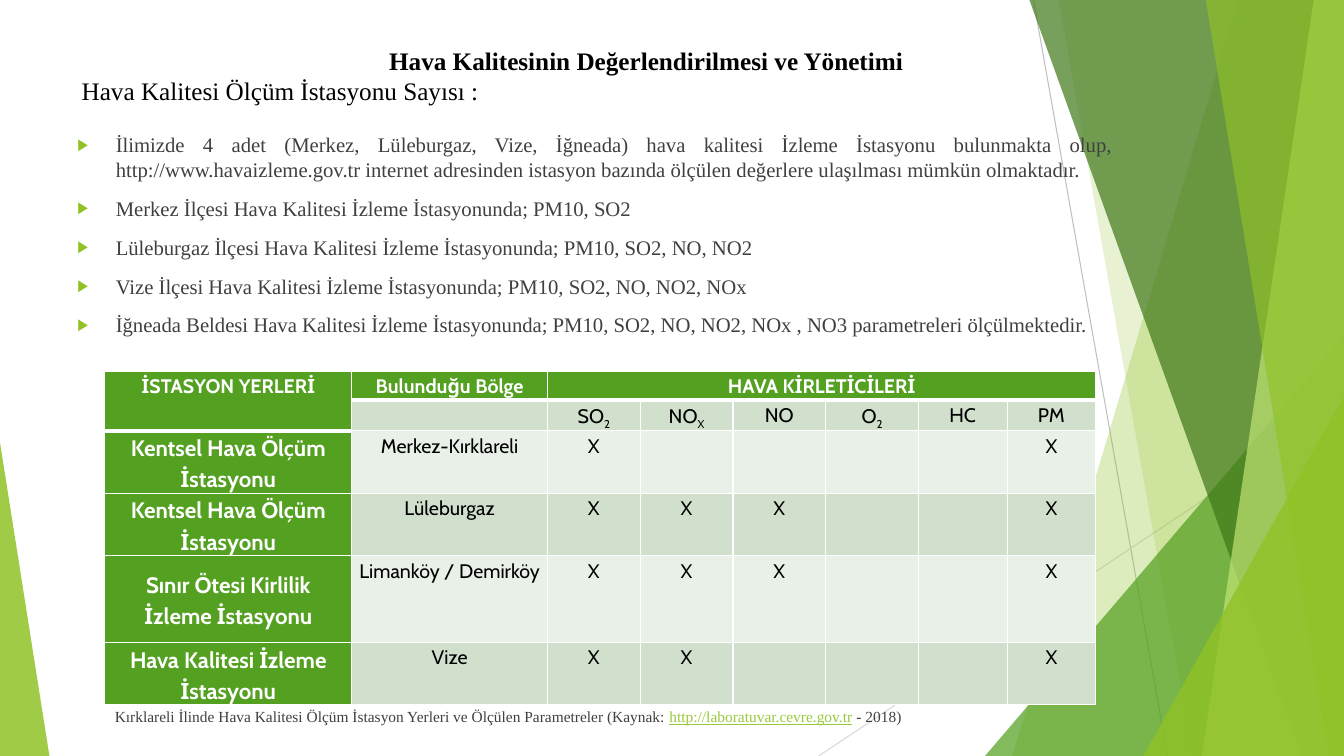
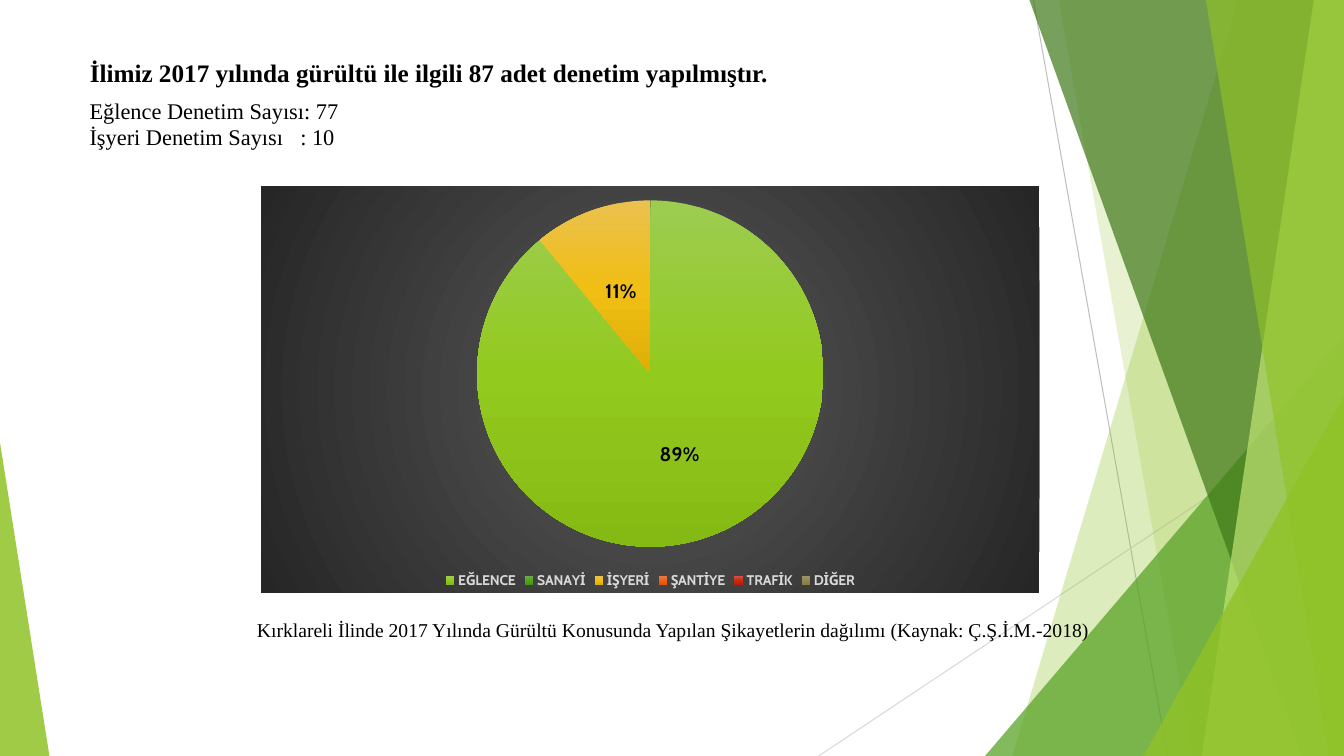
from lxml.etree import SubElement
from pptx import Presentation
from pptx.chart.data import CategoryChartData
from pptx.dml.color import RGBColor
from pptx.enum.chart import XL_CHART_TYPE, XL_LABEL_POSITION, XL_LEGEND_POSITION
from pptx.enum.shapes import MSO_CONNECTOR, MSO_SHAPE
from pptx.enum.text import MSO_ANCHOR, MSO_AUTO_SIZE, PP_ALIGN
from pptx.oxml import parse_xml
from pptx.oxml.ns import nsdecls, qn
from pptx.util import Inches, Pt

WIDTH, HEIGHT = 13.33, 7.5
SERIF, SANS = "Times New Roman", "Cabin"
COLORS = {
    "lime": "90C226", "green": "54A021", "forest": "3F7819", "pale": "C0E474",
    "link": "99CA3C", "black": "000000", "gray": "404040", "white": "FFFFFF",
    "band_dark": "D1DFCD", "band_light": "E9F0E8", "legend": "D9D9D9",
    "rule_dark": "BFBFBF", "rule_light": "D9D9D9",
}

# Backdrop bands that reach the right edge: top left, bottom left, bottom right, colour, opacity
BANDS_BEHIND = [(12.28, 10.04, "lime", 30), (10.5, 11.83, "lime", 20)]
BANDS_FRONT = [(10.21, 12.91, "forest", 70), (13.03, 11.92, "pale", 70),
               (11.96, 13.18, "lime", 65)]

BULLETS = [
    "İlimizde 4 adet (Merkez, Lüleburgaz, Vize, İğneada) hava kalitesi İzleme İstasyonu "
    "bulunmakta olup, http://www.havaizleme.gov.tr internet adresinden istasyon bazında "
    "ölçülen değerlere ulaşılması mümkün olmaktadır.",
    "Merkez İlçesi Hava Kalitesi İzleme İstasyonunda; PM10, SO2",
    "Lüleburgaz İlçesi Hava Kalitesi İzleme İstasyonunda; PM10, SO2, NO, NO2",
    "Vize İlçesi Hava Kalitesi İzleme İstasyonunda; PM10, SO2, NO, NO2, NOx",
    "İğneada Beldesi Hava Kalitesi İzleme İstasyonunda; PM10, SO2, NO, NO2, NOx , NO3 "
    "parametreleri ölçülmektedir.",
]

POLLUTANTS = [("SO", "2"), ("NO", "X"), ("NO", ""), ("O", "2"), ("HC", ""), ("PM", "")]
STATIONS = [
    ("Kentsel Hava Ölçüm İstasyonu", "Merkez-Kırklareli", {"SO2", "PM"}),
    ("Kentsel Hava Ölçüm İstasyonu", "Lüleburgaz", {"SO2", "NOX", "NO", "PM"}),
    ("Sınır Ötesi Kirlilik İzleme İstasyonu", "Limanköy / Demirköy",
     {"SO2", "NOX", "NO", "PM"}),
    ("Hava Kalitesi İzleme İstasyonu", "Vize", {"SO2", "NOX", "PM"}),
]
COLUMN_WIDTHS = [2.45, 1.94] + [0.92] * 4 + [0.88] * 2
ROW_HEIGHTS = [0.29, 0.29, 0.62, 0.62, 0.86, 0.62]

# Category, value, gradient from top to bottom
SLICES = [
    ("EĞLENCE", 89, ("9DCC51", "93CA1E", "85BA14")),
    ("SANAYİ", None, ("6BAC4F", "53A61B", "489912")),
    ("İŞYERİ", 11, ("EBC14F", "F0BE14", "E0AF07")),
    ("ŞANTİYE", None, ("EC794E", "F1630E", "E05603")),
    ("TRAFİK", None, ("CE544D", "CC2911", "BD1E08")),
    ("DİĞER", None, ("9E946B", "948852", "867A46")),
]


def rgb(color):
    return RGBColor.from_string(COLORS[color])


def style_font(font, color="black", **values):
    font.color.rgb = rgb(color)
    for name, value in values.items():
        setattr(font, name, value)


def add_span(para, text, size, color="black", font=SERIF, bold=False, underline=False):
    span = para.add_run()
    span.text = text
    style_font(span.font, color, size=Pt(size), name=font, bold=bold, underline=underline)
    return span


def prepare_frame(box):
    frame = box.text_frame
    for name, value in {"word_wrap": True, "auto_size": MSO_AUTO_SIZE.NONE,
                        "vertical_anchor": MSO_ANCHOR.TOP}.items():
        setattr(frame, name, value)
    return frame


def add_text_box(page, left, top, width, height):
    box = page.shapes.add_textbox(*map(Inches, (left, top, width, height)))
    return prepare_frame(box)


def place_title(page, left, top, width, height, text, align):
    title = page.shapes.title
    title.left, title.top, title.width, title.height = map(Inches, (left, top, width, height))
    frame = prepare_frame(title)
    frame.paragraphs[0].alignment = align
    add_span(frame.paragraphs[0], text, 18, bold=True)
    return frame


def next_paragraph(frame):
    """Give the first paragraph while it is unused, then new ones."""
    first = frame.paragraphs[0]
    return frame.add_paragraph() if first.runs else first


def paint(shape, color, opacity):
    shape.shadow.inherit = False
    shape.line.fill.background()
    shape.fill.solid()
    shape.fill.fore_color.rgb = rgb(color)
    tint = shape.element.xpath(".//a:solidFill/a:srgbClr")[0]
    SubElement(tint, qn("a:alpha"), val=str(opacity * 1000))
    return shape


def add_rule(page, start, end, color):
    rule = page.shapes.add_connector(MSO_CONNECTOR.STRAIGHT, *map(Inches, start + end))
    rule.line.color.rgb = rgb(color)
    rule.line.width = Pt(0.75)
    SubElement(rule.element.spPr, qn("a:effectLst"))
    return rule


def add_band(page, top_left, bottom_left, color, opacity):
    """Draw a full-height band whose right side is the slide edge or slants near it."""
    # A band leaning right ends at its own foot; all others fill up to the edge.
    corners = [(top_left, 0), (WIDTH, 0), (WIDTH, HEIGHT), (bottom_left, HEIGHT)]
    points = [tuple(map(Inches, corner)) for corner in corners]
    builder = page.shapes.build_freeform(*points[0])
    builder.add_line_segments(points[1:], close=True)
    return paint(builder.convert_to_shape(), color, opacity)


def add_triangle(page, left, top, width, apex, color, opacity):
    triangle = page.shapes.add_shape(MSO_SHAPE.ISOSCELES_TRIANGLE,
                                     *map(Inches, (left, top, width, HEIGHT - top)))
    triangle.adjustments[0] = apex
    return paint(triangle, color, opacity)


def build_backdrop(page):
    """Draw the shared backdrop and move it to the layout, behind its placeholders."""
    parts = [add_rule(page, (10.25, 0), (11.58, HEIGHT), "rule_dark"),
             add_rule(page, (WIDTH, 4.03), (8.12, HEIGHT), "rule_light")]
    parts += [add_band(page, *band) for band in BANDS_BEHIND]
    parts.append(add_triangle(page, 9.77, 3.33, 3.56, 1, "green", 72))
    parts += [add_band(page, *band) for band in BANDS_FRONT]
    parts += [add_triangle(page, 11.34, 3.93, 1.99, 1, "lime", 80),
              add_triangle(page, 0, 4.39, 0.49, 0, "lime", 85)]
    tree = page.slide_layout.shapes.element
    for index, part in enumerate(parts):
        part.element.xpath(".//p:cNvPr")[0].set("id", str(100 + index))
        tree.insert(2 + index, part.element)


def add_bullet(frame, text):
    para = next_paragraph(frame)
    para.alignment = PP_ALIGN.JUSTIFY
    para.space_before = Pt(10)
    add_span(para, text, 14.8, "gray")
    properties = para._p.get_or_add_pPr()
    properties.set("marL", str(Inches(0.38)))
    properties.set("indent", str(-Inches(0.38)))
    bullet_color = SubElement(properties, qn("a:buClr"))
    SubElement(bullet_color, qn("a:srgbClr"), val=COLORS["lime"])
    SubElement(properties, qn("a:buSzPct"), val="80000")
    SubElement(properties, qn("a:buFont"), typeface="Arial")
    SubElement(properties, qn("a:buChar"), char="▶")


def add_borders(cell, **points):
    """Draw white borders of 1 point, or as given for the sides L, R, T and B."""
    properties = cell._tc.get_or_add_tcPr()
    for side in "LRTB":
        line = SubElement(properties, qn(f"a:ln{side}"), w=str(Pt(points.get(side, 1))))
        fill = SubElement(line, qn("a:solidFill"))
        SubElement(fill, qn("a:srgbClr"), val=COLORS["white"])


def fill_cell(cell, fill, text="", subscript="", size=14, color="black", bold=False,
              anchor=MSO_ANCHOR.TOP, **borders):
    add_borders(cell, **borders)
    cell.fill.solid()
    cell.fill.fore_color.rgb = rgb(fill)
    for name, value in {"margin_left": Inches(0.07), "margin_right": Inches(0.07),
                        "margin_top": 0, "margin_bottom": 0,
                        "vertical_anchor": anchor}.items():
        setattr(cell, name, value)
    para = cell.text_frame.paragraphs[0]
    para.alignment = PP_ALIGN.CENTER
    para.line_spacing = 1.15
    if text:
        add_span(para, text, size, color, SANS, bold)
    else:
        SubElement(para._p, qn("a:endParaRPr"), sz=str(size * 100))
    if subscript:
        span = add_span(para, subscript, size, color, SANS, bold)
        span._r.get_or_add_rPr().set("baseline", "-25000")


def add_station_table(page):
    frame = page.shapes.add_table(len(ROW_HEIGHTS), len(COLUMN_WIDTHS), Inches(1.04),
                                  Inches(3.68), Inches(sum(COLUMN_WIDTHS)),
                                  Inches(sum(ROW_HEIGHTS)))
    table = frame.table
    table.first_row = table.horz_banding = False
    for column, width in zip(table.columns, COLUMN_WIDTHS):
        column.width = Inches(width)
    for row, height in zip(table.rows, ROW_HEIGHTS):
        row.height = Inches(height)

    heading = {"fill": "green", "color": "white", "bold": True}
    titles = ["İSTASYON YERLERİ", "Bulunduğu Bölge", "HAVA KİRLETİCİLERİ"] + [""] * 5
    for column, text in enumerate(titles):
        fill_cell(table.cell(0, column), text=text, B=3, **heading)
    fill_cell(table.cell(1, 0), B=3, **heading)
    for column, (name, subscript) in enumerate([("", "")] + POLLUTANTS, 1):
        fill_cell(table.cell(1, column), "band_dark", name, subscript, T=3)
    table.cell(0, 0).merge(table.cell(1, 0))
    table.cell(0, 2).merge(table.cell(0, 7))

    for row, (station, region, measured) in enumerate(STATIONS, 2):
        band = "band_dark" if row % 2 else "band_light"
        fill_cell(table.cell(row, 0), text=station, size=16, anchor=MSO_ANCHOR.MIDDLE,
                  T=3 if row == 2 else 1, **heading)
        marks = ["X" if "".join(name) in measured else "" for name in POLLUTANTS]
        for column, text in enumerate([region] + marks, 1):
            fill_cell(table.cell(row, column), band, text)


def gradient(colors, direction):
    last = len(colors) - 1
    stops = "".join(f'<a:gs pos="{100000 * i // last}"><a:srgbClr val="{color}"/></a:gs>'
                    for i, color in enumerate(colors))
    return parse_xml(f'<a:gradFill {nsdecls("a")} rotWithShape="1">'
                     f'<a:gsLst>{stops}</a:gsLst>{direction}</a:gradFill>')


def add_complaint_chart(page):
    data = CategoryChartData()
    data.categories = [name for name, _, _ in SLICES]
    data.add_series("Series 1", [value for _, value, _ in SLICES])
    chart = page.shapes.add_chart(XL_CHART_TYPE.PIE, Inches(2.59), Inches(1.85),
                                  Inches(7.72), Inches(4.03), data).chart
    chart.has_title = False
    style_font(chart.font, size=Pt(10), name=SANS)
    chart.has_legend = True
    chart.legend.position = XL_LEGEND_POSITION.BOTTOM
    chart.legend.include_in_layout = False
    style_font(chart.legend.font, "legend", size=Pt(10), name=SANS, bold=True)

    plot = chart.plots[0]
    plot.vary_by_categories = True
    plot.has_data_labels = True
    labels = plot.data_labels
    for name, value in {"show_percentage": True, "show_value": False,
                        "number_format": "0%", "number_format_is_linked": False,
                        "position": XL_LABEL_POSITION.CENTER}.items():
        setattr(labels, name, value)
    style_font(labels.font, size=Pt(14), name=SANS, bold=True)

    for index, (_, _, colors) in enumerate(SLICES):
        form = plot.series[0].points[index].format
        form.line.fill.background()
        form._element.get_or_add_spPr().insert(0, gradient(colors, '<a:lin ang="5400000"/>'))
    backdrop = parse_xml(f'<c:spPr {nsdecls("c", "a")}><a:ln><a:noFill/></a:ln></c:spPr>')
    center = '<a:fillToRect l="50000" t="50000" r="50000" b="50000"/>'
    backdrop.insert(0, gradient(("595959", "262626"), f'<a:path path="circle">{center}</a:path>'))
    chart.element.find(qn("c:chart")).addnext(backdrop)


def build_air_page(page):
    frame = place_title(page, 0.71, 0.4, 11.4, 0.71,
                        "Hava Kalitesinin Değerlendirilmesi ve Yönetimi", PP_ALIGN.CENTER)
    para = frame.add_paragraph()
    para.alignment = PP_ALIGN.JUSTIFY
    add_span(para, "Hava Kalitesi Ölçüm İstasyonu Sayısı :", 18)
    body = add_text_box(page, 0.67, 1.26, 10.46, 2.27)
    for text in BULLETS:
        add_bullet(body, text)
    add_station_table(page)
    caption = add_text_box(page, 1.04, 6.97, 8.33, 0.29).paragraphs[0]
    add_span(caption, "Kırklareli İlinde Hava Kalitesi Ölçüm İstasyon Yerleri ve Ölçülen "
                      "Parametreler (Kaynak: ", 11, "gray")
    add_span(caption, "http://laboratuvar.cevre.gov.tr", 11, "link", underline=True)
    add_span(caption, " - 2018)", 11, "gray")


def build_noise_page(page):
    place_title(page, 0.79, 0.52, 12.07, 0.39,
                "İlimiz 2017 yılında gürültü ile ilgili 87 adet denetim yapılmıştır.",
                PP_ALIGN.LEFT)
    counts = add_text_box(page, 0.79, 0.91, 12.07, 0.64)
    for text in ("Eğlence Denetim Sayısı: 77", "İşyeri Denetim Sayısı\t: 10"):
        para = next_paragraph(counts)
        add_span(para, text, 16)
        tabs = SubElement(para._p.get_or_add_pPr(), qn("a:tabLst"))
        SubElement(tabs, qn("a:tab"), pos=str(Inches(2.09)), algn="l")
    caption = add_text_box(page, 2.45, 6.08, 8.74, 0.34).paragraphs[0]
    add_span(caption, "Kırklareli İlinde 2017 Yılında Gürültü Konusunda Yapılan Şikayetlerin "
                      "dağılımı (Kaynak: Ç.Ş.İ.M.-2018)", 14)
    add_complaint_chart(page)


def main():
    deck = Presentation()
    deck.slide_width, deck.slide_height = Inches(WIDTH), Inches(HEIGHT)
    title_only = deck.slide_layouts[5]
    air_page, noise_page = (deck.slides.add_slide(title_only) for _ in range(2))
    build_backdrop(air_page)
    build_air_page(air_page)
    build_noise_page(noise_page)
    deck.save("out.pptx")


if __name__ == "__main__":
    main()
